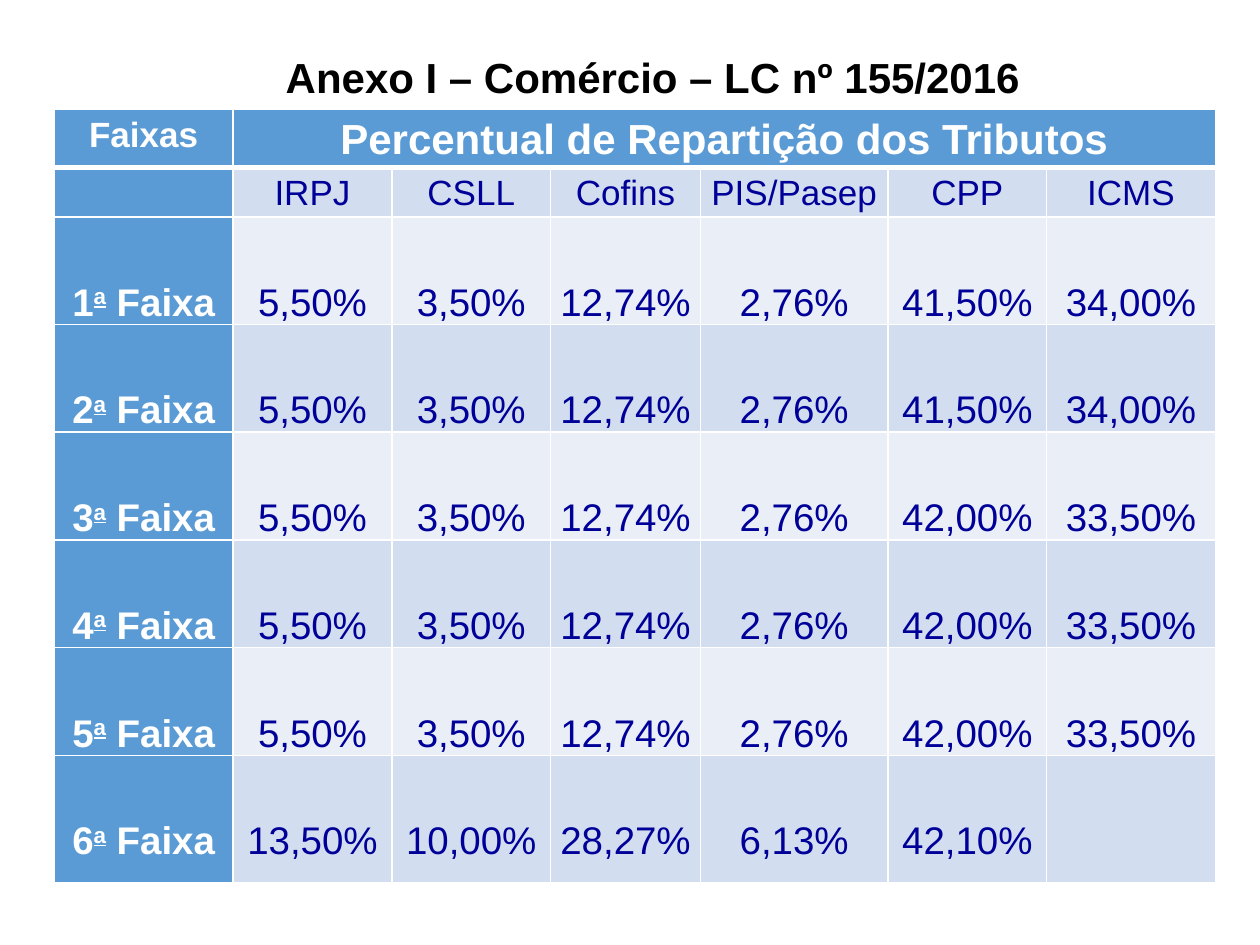
"""Build a slide with the tax distribution table for commerce brackets."""
from lxml.etree import SubElement
from pptx import Presentation
from pptx.dml.color import RGBColor
from pptx.enum.text import MSO_AUTO_SIZE, PP_ALIGN
from pptx.oxml.ns import qn
from pptx.util import Cm, Pt

WHITE = RGBColor(0xFF, 0xFF, 0xFF)
BLACK = RGBColor(0x00, 0x00, 0x00)
NAVY = RGBColor(0x00, 0x00, 0x99)
BLUE = RGBColor(0x5B, 0x9B, 0xD5)
BANDS = [RGBColor(0xEA, 0xEF, 0xF7), RGBColor(0xD2, 0xDE, 0xEF)]


def add_text(paragraph, text, size=22, color=NAVY, bold=False, ordinal=False):
    run = paragraph.add_run()
    run.text = text
    run.font.name = "Arial"
    run.font.size = Pt(size)
    run.font.bold = bold
    run.font.color.rgb = color
    if ordinal:
        run.font.underline = True
        run.font._element.set("baseline", "30000")


def add_border(cell, side, width):
    line = SubElement(cell._tc.get_or_add_tcPr(), qn(f"a:ln{side}"), w=str(Pt(width)))
    SubElement(SubElement(line, qn("a:solidFill")), qn("a:srgbClr"), val=str(WHITE))


presentation = Presentation()
presentation.slide_width = Cm(25.4)
presentation.slide_height = Cm(19.05)
slide = presentation.slides.add_slide(presentation.slide_layouts[6])

rows = [
    ["Faixas", "Percentual de Repartição dos Tributos", "", "", "", "", ""],
    ["", "IRPJ", "CSLL", "Cofins", "PIS/Pasep", "CPP", "ICMS"],
    ["1", "5,50%", "3,50%", "12,74%", "2,76%", "41,50%", "34,00%"],
    ["2", "5,50%", "3,50%", "12,74%", "2,76%", "41,50%", "34,00%"],
    ["3", "5,50%", "3,50%", "12,74%", "2,76%", "42,00%", "33,50%"],
    ["4", "5,50%", "3,50%", "12,74%", "2,76%", "42,00%", "33,50%"],
    ["5", "5,50%", "3,50%", "12,74%", "2,76%", "42,00%", "33,50%"],
    ["6", "13,50%", "10,00%", "28,27%", "6,13%", "42,10%", ""],
]
column_widths = [3.61, 3.2, 3.2, 3.02, 3.78, 3.2, 3.4]
row_heights = [1.17, 0.99] + [2.11] * 5 + [2.57]

table = slide.shapes.add_table(
    len(rows), len(column_widths), Cm(1.09), Cm(2.21),
    Cm(sum(column_widths)), Cm(sum(row_heights)),
).table
for column, width in zip(table.columns, column_widths):
    column.width = Cm(width)
for row, height in zip(table.rows, row_heights):
    row.height = Cm(height)
table.cell(0, 1).merge(table.cell(0, 6))

for row_index, values in enumerate(rows):
    for column_index, value in enumerate(values):
        cell = table.cell(row_index, column_index)
        heading = row_index == 0 or column_index == 0
        cell.margin_left = cell.margin_right = Cm(0.18)
        cell.margin_top = cell.margin_bottom = 0
        for side in "LRTB":
            thick = (row_index, side) in [(0, "B"), (1, "T")]
            add_border(cell, side, 3 if thick else 1)
        cell.fill.solid()
        cell.fill.fore_color.rgb = BLUE if heading else BANDS[row_index % 2]
        if not value:
            continue
        paragraph = cell.text_frame.paragraphs[0]
        paragraph.alignment = PP_ALIGN.CENTER
        paragraph.line_spacing = 1.15 if row_index < 2 else 2.5
        paragraph.space_after = Pt(10)
        size = 22 if row_index > 1 else 20
        if (row_index, column_index) == (0, 1):
            size = 24
        color = WHITE if heading else NAVY
        add_text(paragraph, value, size=size, color=color, bold=heading)
        if row_index > 1 and column_index == 0:
            add_text(paragraph, "a", color=WHITE, bold=True, ordinal=True)
            add_text(paragraph, " Faixa", color=WHITE, bold=True)

# The merged header keeps its bottom edge across all spanned columns.
title = slide.shapes.add_textbox(Cm(5.51), Cm(0.91), Cm(15.47), Cm(1.27))
title.text_frame.word_wrap = False
title.text_frame.auto_size = MSO_AUTO_SIZE.SHAPE_TO_FIT_TEXT
add_text(
    title.text_frame.paragraphs[0], "Anexo I – Comércio – LC nº 155/2016",
    size=24, color=BLACK, bold=True,
)

presentation.save("out.pptx")
